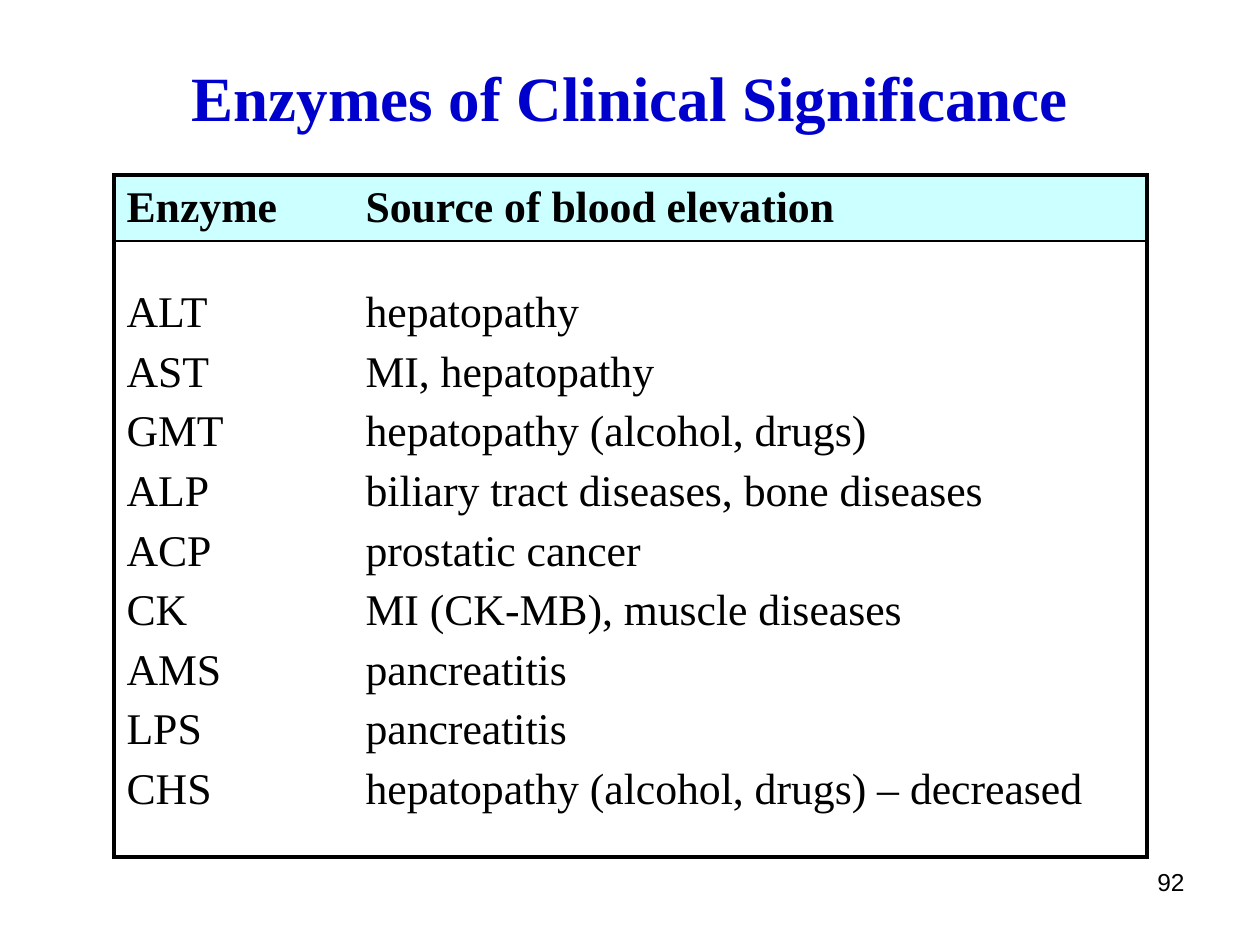
from dataclasses import dataclass

from lxml.etree import SubElement
from pptx import Presentation
from pptx.dml.color import RGBColor as Rgb
from pptx.enum.text import MSO_ANCHOR as Anchor, PP_ALIGN as Align
from pptx.oxml.ns import qn
from pptx.util import Pt

EMU_PER_PX = 914400 / 126


@dataclass(frozen=True)
class Theme:
    ink: str = "000000"
    title: str = "0000CC"
    header: str = "CCFFFF"
    paper: str = "FFFFFF"
    serif: str = "Times New Roman"
    sans: str = "Arial"
    title_size: int = 36
    table_size: int = 25
    number_size: int = 14
    frame: float = 2.25
    rule: float = 1


THEME = Theme()
HEADINGS = ("Enzyme", "Source of blood elevation")
ENZYMES = (
    ("ALT", "hepatopathy"),
    ("AST", "MI, hepatopathy"),
    ("GMT", "hepatopathy (alcohol, drugs)"),
    ("ALP", "biliary tract diseases, bone diseases"),
    ("ACP", "prostatic cancer"),
    ("CK", "MI (CK-MB), muscle diseases"),
    ("AMS", "pancreatitis"),
    ("LPS", "pancreatitis"),
    ("CHS", "hepatopathy (alcohol, drugs) – decreased"),
)


def px(length):
    return round(length * EMU_PER_PX)


def apply(target, values):
    for name, value in values.items():
        setattr(target, name, value)


def write(frame, lines, font, color, paragraph_format):
    for index, line in enumerate(lines):
        paragraph = frame.add_paragraph() if index else frame.paragraphs[0]
        apply(paragraph, paragraph_format)
        run = paragraph.add_run()
        run.text = line
        apply(run.font, font)
        run.font.color.rgb = Rgb.from_string(color)


def add_caption(slide, box, text, font, color, align, anchor):
    frame = slide.shapes.add_textbox(*map(px, box)).text_frame
    apply(frame, {"word_wrap": True, "vertical_anchor": anchor})
    write(frame, [text], font, color, {"alignment": align})


def set_borders(cell, widths):
    properties = cell._tc.get_or_add_tcPr()
    for position, edge in enumerate("LRTB"):
        width = widths.get(edge, 0)
        line = SubElement(properties, qn(f"a:ln{edge}"), w=str(Pt(width)))
        properties.insert(position, line)
        if width:
            fill = SubElement(line, qn("a:solidFill"))
            SubElement(fill, qn("a:srgbClr"), val=THEME.ink)
        else:
            SubElement(line, qn("a:noFill"))


def add_enzyme_table(slide, box, header_height, enzyme_width):
    left, top, width, height = box
    table = slide.shapes.add_table(2, 2, *map(px, box)).table
    apply(table, {"first_row": False, "horz_banding": False})
    for column, size in zip(table.columns, (enzyme_width, width - enzyme_width)):
        column.width = px(size)
    for row, size in zip(table.rows, (header_height, height - header_height)):
        row.height = px(size)

    contents = ([[heading] for heading in HEADINGS], list(zip(*ENZYMES)))
    row_styles = (
        (THEME.header, True, 1.0, {"T": THEME.frame, "B": THEME.rule}),
        (THEME.paper, False, 1.1, {"T": THEME.rule, "B": THEME.frame}),
    )
    for row, (texts, style) in enumerate(zip(contents, row_styles)):
        fill, bold, spacing, edges = style
        font = {"name": THEME.serif, "size": Pt(THEME.table_size), "bold": bold}
        paragraph_format = {"line_spacing": spacing, "space_before": Pt(3.7)}
        for column, (lines, side) in enumerate(zip(texts, "LR")):
            cell = table.cell(row, column)
            cell.vertical_anchor = Anchor.MIDDLE
            cell.fill.solid()
            cell.fill.fore_color.rgb = Rgb.from_string(fill)
            set_borders(cell, {**edges, side: THEME.frame})
            write(cell.text_frame, lines, font, THEME.ink, paragraph_format)


def main():
    deck = Presentation()
    apply(deck, {"slide_width": px(1260), "slide_height": px(945)})
    slide = deck.slides.add_slide(deck.slide_layouts[6])
    add_caption(
        slide, (903, 861, 294, 66), "92",
        {"name": THEME.sans, "size": Pt(THEME.number_size)},
        THEME.ink, Align.RIGHT, Anchor.TOP,
    )
    add_caption(
        slide, (63, 38, 1134, 117), "Enzymes of Clinical Significance",
        {"name": THEME.serif, "size": Pt(THEME.title_size), "bold": True},
        THEME.title, Align.CENTER, Anchor.MIDDLE,
    )
    add_enzyme_table(slide, (114, 175, 1033, 682), 66, 239)
    deck.save("out.pptx")


if __name__ == "__main__":
    main()
